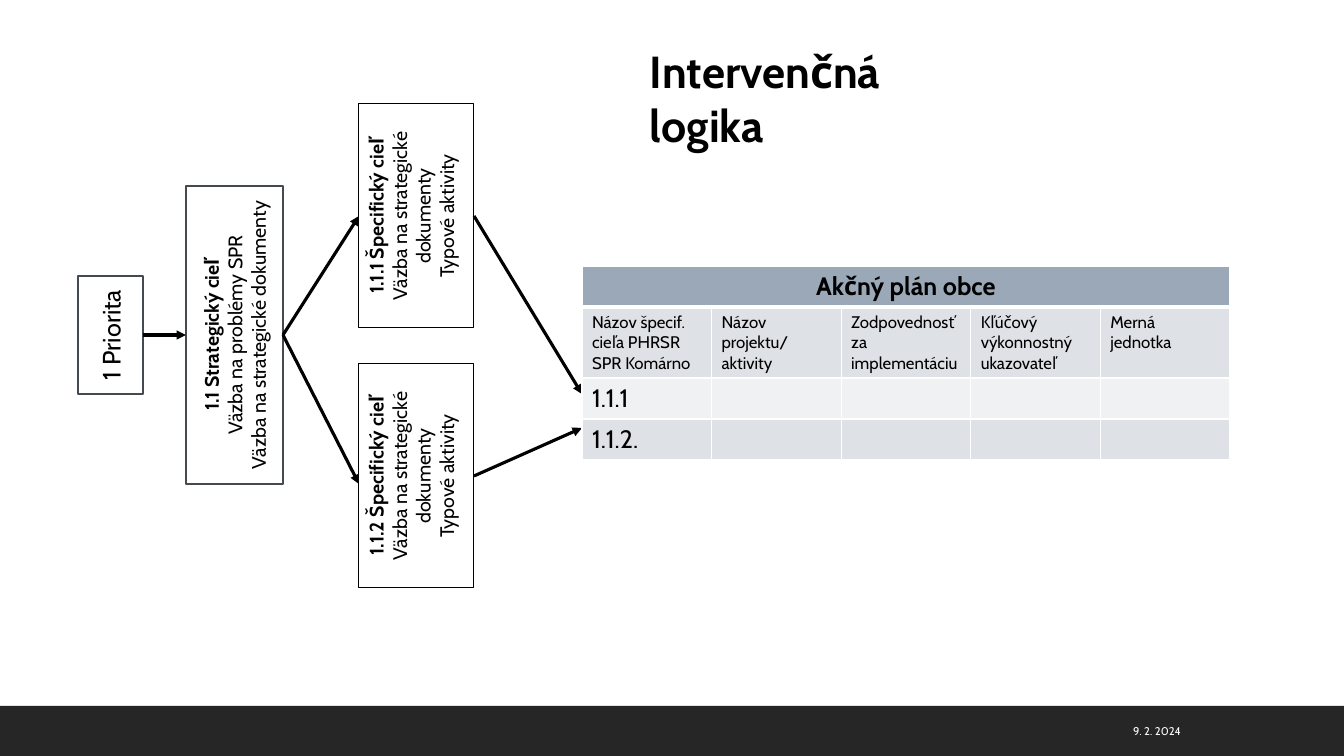
from pptx import Presentation
from pptx.dml.color import RGBColor as RGB
from pptx.enum.shapes import MSO_CONNECTOR as CONN, MSO_SHAPE as SHAPE
from pptx.enum.text import MSO_ANCHOR as ANCHOR, PP_ALIGN as ALIGN
from pptx.oxml.ns import qn
from pptx.util import Pt
from lxml.etree import SubElement as sub, Element

SCALE = 914400 / 100.8
FONT = "Cabin"
TOP, LEFT, BOTTOM, RIGHT = range(4)
COLORS = {
    "ink": "000000", "white": "FFFFFF", "bar": "262626", "edge": "444A50",
    "head": "9BA8B7", "dark": "DEE1E6", "light": "EFF1F3",
}


def px(n):
    return round(n * SCALE)


def color(name):
    return RGB.from_string(COLORS[name])


def write(frame, lines, size, bold=0, align=ALIGN.LEFT, ink="ink"):
    """Fill a frame with paragraphs; the first `bold` of them are bold."""
    frame.word_wrap = True
    for i, line in enumerate(lines):
        para = frame.add_paragraph() if i else frame.paragraphs[0]
        para.text = line
        para.alignment = align
        font = para.font
        font.name, font.size, font.bold = FONT, Pt(size), i < bold
        font.color.rgb = color(ink)


def label(slide, box, text, size, **style):
    shape = slide.shapes.add_textbox(*map(px, box))
    write(shape.text_frame, [text], size, **style)
    return shape


def footer(slide, x, y, w, h):
    bar = slide.shapes.add_shape(SHAPE.RECTANGLE, px(x), px(y), px(w), px(h))
    bar.shadow.inherit = False
    bar.fill.solid()
    bar.fill.fore_color.rgb = color("bar")
    bar.line.fill.background()
    date = label(slide, (x + 906, y + 5, 285, 40), "9. 2. 2024", 8,
                 align=ALIGN.RIGHT, ink="white")
    date.text_frame.vertical_anchor = ANCHOR.MIDDLE


def node(slide, box, lines, size=14, bold=1, edge="edge", width=1.25,
         anchor=ANCHOR.MIDDLE):
    """Outlined box whose text reads upwards."""
    shape = slide.shapes.add_shape(SHAPE.RECTANGLE, *map(px, box))
    shape.shadow.inherit = False
    shape.fill.background()
    shape.line.color.rgb = color(edge)
    shape.line.width = Pt(width)
    frame = shape.text_frame
    write(frame, lines, size, bold, ALIGN.CENTER)
    frame.vertical_anchor = anchor
    frame._txBody.bodyPr.set("vert", "vert270")
    return shape


def arrow(slide, start, tip=(0, 0), end=None):
    """Arrow from a node's right side to a node's left side or a point."""
    line = slide.shapes.add_connector(CONN.STRAIGHT, 0, 0, *map(px, tip))
    line.begin_connect(start, RIGHT)
    if end is not None:
        line.end_connect(end, LEFT)
    line.line.color.rgb = color("ink")
    line.line.width = Pt(2.25)
    sub(line.line._get_or_add_ln(), qn("a:tailEnd"), type="triangle")
    sub(line._element.spPr, qn("a:effectLst"))


def tree(slide, x, y):
    """Priority, strategic goal and specific goals, with their arrows."""
    first = node(slide, (x, y + 172, 65, 118), ["1 Priorita"], 18, bold=0)
    goal = node(slide, (x + 108, y + 82, 97, 298), [
        "1.1 Strategický cieľ", "Väzba na problémy SPR",
        "Väzba na strategické dokumenty"])
    parts = [
        node(slide, (x + 281, y + i * 260, 115, 224), [
            f"1.1.{i + 1} Špecifický cieľ", "Väzba na strategické dokumenty",
            "Typové aktivity"], edge="ink", width=0.75, anchor=ANCHOR.TOP)
        for i in range(2)]
    arrow(slide, first, end=goal)
    arrow(slide, goal, end=parts[0])
    arrow(slide, goal, tip=(x + 281, y + 380))
    for part, drop in zip(parts, (290, 324)):
        arrow(slide, part, tip=(x + 504, y + drop))


def border(cell, **widths):
    """White cell borders, given in points by side."""
    props = cell._tc.get_or_add_tcPr()
    for i, side in enumerate("LRTB"):
        ln = Element(qn(f"a:ln{side}"), w=str(Pt(widths.get(side, 1))))
        fill = sub(ln, qn("a:solidFill"))
        sub(fill, qn("a:srgbClr"), val=COLORS["white"])
        props.insert(i, ln)


def plan(slide, x, y, w):
    """Action plan table."""
    rows = [
        (41, "head", [["Akčný plán obce"]]),
        (71, "dark", [["Názov špecif.", "cieľa PHRSR SPR Komárno"],
                      ["Názov projektu/ aktivity"],
                      ["Zodpovednosť", "za implementáciu"],
                      ["Kľúčový výkonnostný ukazovateľ"],
                      ["Merná jednotka"]]),
        (41, "light", [["1.1.1"]]),
        (41, "dark", [["1.1.2."]]),
    ]
    cols = 5
    high = sum(row[0] for row in rows)
    table = slide.shapes.add_table(
        len(rows), cols, px(x), px(y), px(w), px(high)).table
    for col in table.columns:
        col.width = px(w / cols)
    for r, (tall, fill, texts) in enumerate(rows):
        table.rows[r].height = px(tall)
        for c in range(cols):
            cell = table.cell(r, c)
            cell.fill.solid()
            cell.fill.fore_color.rgb = color(fill)
            border(cell, T=3 if r == 1 else 1, B=1 if r else 3)
            write(cell.text_frame, texts[c] if c < len(texts) else [""],
                  12 if r == 1 else 18, bold=r == 0,
                  align=ALIGN.LEFT if r else ALIGN.CENTER)
    table.cell(0, 0).merge(table.cell(0, cols - 1))


def main():
    deck = Presentation()
    deck.slide_width, deck.slide_height = px(1344), px(756)
    slide = deck.slides.add_slide(deck.slide_layouts[6])
    footer(slide, 0, 706, 1344, 50)
    tree(slide, 78, 104)
    plan(slide, 582, 266, 648)
    label(slide, (640, 39, 371, 118), "Intervenčná\vlogika", 32, bold=1)
    deck.save("out.pptx")


if __name__ == "__main__":
    main()
